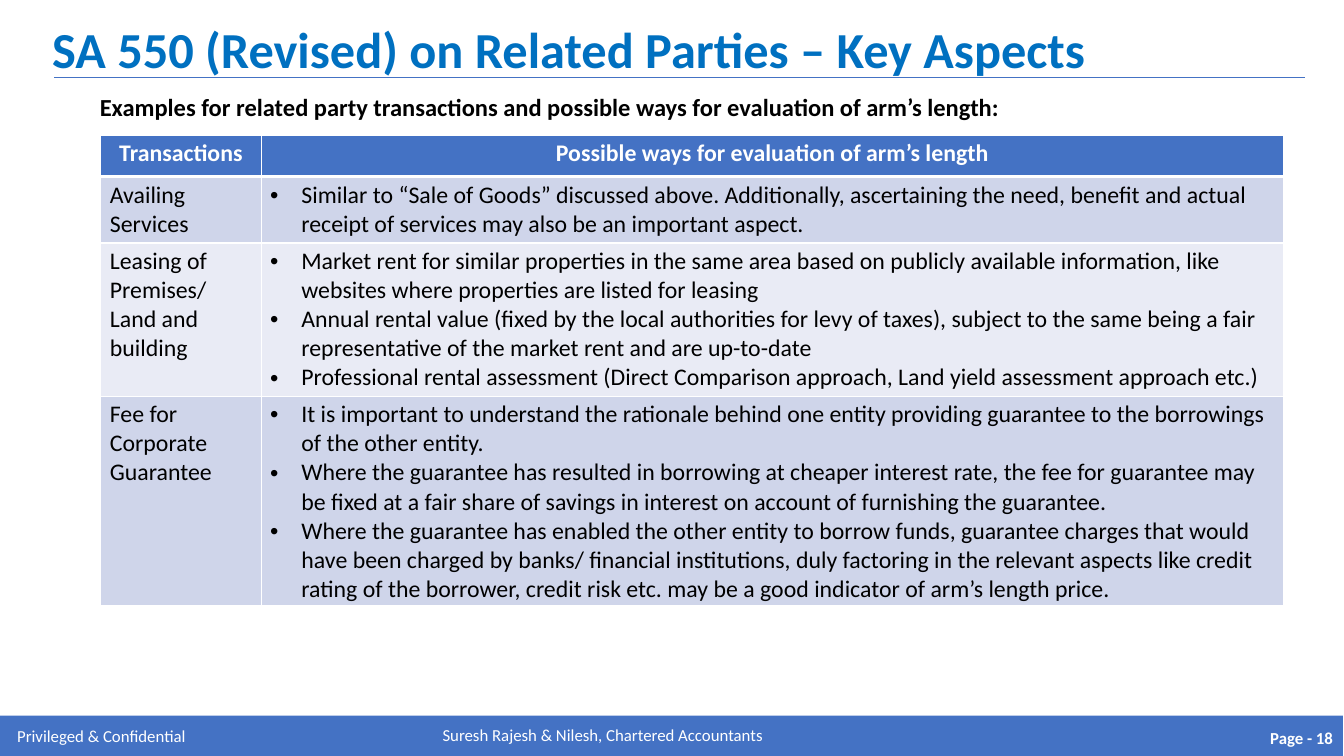
"""Build the slide on related party transactions under SA 550 (Revised)."""
from dataclasses import dataclass
from typing import Any

from lxml import etree
from pptx import Presentation
from pptx import util as u
from pptx.dml.color import RGBColor
from pptx.enum import shapes, text
from pptx.oxml import ns


@dataclass(frozen=True)
class Theme:
    font: str = "Calibri"
    accent: str = "4472C4"
    heading: str = "0070C0"
    ink: str = "000000"
    paper: str = "FFFFFF"
    bands: tuple[str, str] = ("CFD5EA", "E9EBF5")
    title_size: float = 36
    lead_size: float = 17.5
    table_size: float = 17
    footer_size: float = 12


@dataclass(frozen=True)
class Box:
    left: float
    top: float
    width: float
    height: float

    def emu(self) -> tuple[int, ...]:
        return tuple(u.Inches(v) for v in (self.left, self.top, self.width, self.height))


@dataclass(frozen=True)
class Transaction:
    name: str
    evaluations: tuple[str, ...]
    height: float


@dataclass(frozen=True)
class FooterNote:
    wording: str
    box: Box
    align: Any


THEME = Theme()
LEFT, CENTER, RIGHT = text.PP_ALIGN.LEFT, text.PP_ALIGN.CENTER, text.PP_ALIGN.RIGHT
HEADINGS = ("Transactions", "Possible ways for evaluation of arm’s length")
HEADING_HEIGHT = 0.41
COLUMN_WIDTHS = (1.59, 10.14)
TRANSACTIONS = (
    Transaction("Availing Services", (
        "Similar to “Sale of Goods” discussed above. Additionally, ascertaining the need, "
        "benefit and actual receipt of services may also be an important aspect.",
    ), 0.66),
    Transaction("Leasing of Premises/ Land and building", (
        "Market rent for similar properties in the same area based on publicly available "
        "information, like websites where properties are listed for leasing",
        "Annual rental value (fixed by the local authorities for levy of taxes), subject to "
        "the same being a fair representative of the market rent and are up-to-date",
        "Professional rental assessment (Direct Comparison approach, Land yield assessment "
        "approach etc.)",
    ), 1.52),
    Transaction("Fee for Corporate Guarantee", (
        "It is important to understand the rationale behind one entity providing guarantee "
        "to the borrowings of the other entity.",
        "Where the guarantee has resulted in borrowing at cheaper interest rate, the fee for "
        "guarantee may be fixed at a fair share of savings in interest on account of "
        "furnishing the guarantee.",
        "Where the guarantee has enabled the other entity to borrow funds, guarantee charges "
        "that would have been charged by banks/ financial institutions, duly factoring in the "
        "relevant aspects like credit rating of the borrower, credit risk etc. may be a good "
        "indicator of arm’s length price.",
    ), 2.08),
)
FOOTER_NOTES = (
    FooterNote("Privileged & Confidential", Box(0.08, 7.16, 2, 0.29), LEFT),
    FooterNote("Suresh Rajesh & Nilesh, Chartered Accountants", Box(3.93, 7.15, 4.1, 0.29), CENTER),
)


def write(frame: Any, *lines: str, size: float, color: str, bold: bool = False,
          align: Any = LEFT, spacing: Any = None, before: float = 0,
          indent: float = 0, bullet: str = "") -> None:
    for number, line in enumerate(lines):
        paragraph = frame.add_paragraph() if number else frame.paragraphs[0]
        paragraph.alignment = align
        paragraph.line_spacing = spacing
        paragraph.space_before = u.Pt(before)
        run = paragraph.add_run()
        run.text = line
        run.font.name, run.font.size, run.font.bold = THEME.font, u.Pt(size), bold
        run.font.color.rgb = RGBColor.from_string(color)
        properties = paragraph._p.get_or_add_pPr()
        properties.set("marL", str(u.Inches(indent)))
        properties.set("indent", str(u.Inches(-indent if bullet else 0)))
        if bullet:
            etree.SubElement(properties, ns.qn("a:buFont"), typeface="Arial")
            etree.SubElement(properties, ns.qn("a:buChar"), char=bullet)


def add_text(slide: Any, box: Box, wording: str, *, margins: tuple[float, float] = (0.1, 0.05),
             anchor: Any = text.MSO_ANCHOR.TOP, **style: Any) -> None:
    frame = slide.shapes.add_textbox(*box.emu()).text_frame
    frame.word_wrap = True
    frame.vertical_anchor = anchor
    frame.margin_left = frame.margin_right = u.Inches(margins[0])
    frame.margin_top = frame.margin_bottom = u.Inches(margins[1])
    write(frame, wording, **style)


def add_rule(slide: Any, left: float, right: float, top: float) -> None:
    rule = slide.shapes.add_connector(shapes.MSO_CONNECTOR.STRAIGHT, u.Inches(left),
                                      u.Inches(top), u.Inches(right), u.Inches(top))
    rule.line.color.rgb = RGBColor.from_string(THEME.accent)
    rule.line.width = u.Pt(0.5)
    etree.SubElement(rule._element.spPr, ns.qn("a:effectLst"))


def style_cell(cell: Any, fill: str, top: float, bottom: float) -> None:
    cell.margin_left = cell.margin_right = u.Inches(0.09)
    cell.margin_top = cell.margin_bottom = u.Inches(0.04)
    properties = cell._tc.get_or_add_tcPr()
    for side, width in (("L", 1), ("R", 1), ("T", top), ("B", bottom)):
        border = etree.SubElement(properties, ns.qn(f"a:ln{side}"), w=str(u.Pt(width)))
        solid = etree.SubElement(border, ns.qn("a:solidFill"))
        etree.SubElement(solid, ns.qn("a:srgbClr"), val=THEME.paper)
    cell.fill.solid()
    cell.fill.fore_color.rgb = RGBColor.from_string(fill)


def add_transactions(slide: Any, left: float, top: float) -> None:
    heights = (HEADING_HEIGHT, *(item.height for item in TRANSACTIONS))
    box = Box(left, top, sum(COLUMN_WIDTHS), sum(heights))
    table = slide.shapes.add_table(len(heights), len(COLUMN_WIDTHS), *box.emu()).table
    for column, width in zip(table.columns, COLUMN_WIDTHS):
        column.width = u.Inches(width)
    for row, height in zip(table.rows, heights):
        row.height = u.Inches(height)
    for column, heading in enumerate(HEADINGS):
        cell = table.cell(0, column)
        style_cell(cell, THEME.accent, 1, 3)
        write(cell.text_frame, heading, size=THEME.table_size, color=THEME.paper,
              bold=True, align=CENTER)
    for row, item in enumerate(TRANSACTIONS, 1):
        name, evaluations = table.cell(row, 0), table.cell(row, 1)
        for cell in (name, evaluations):
            style_cell(cell, THEME.bands[(row - 1) % 2], 3 if row == 1 else 1, 1)
        write(name.text_frame, item.name, size=THEME.table_size, color=THEME.ink)
        write(evaluations.text_frame, *item.evaluations, size=THEME.table_size,
              color=THEME.ink, indent=0.31, bullet="•")


def add_footer(slide: Any) -> None:
    band = slide.shapes.add_shape(shapes.MSO_SHAPE.RECTANGLE, *Box(0, 7.1, 13.32, 0.44).emu())
    band.shadow.inherit = False
    band.fill.solid()
    band.fill.fore_color.rgb = RGBColor.from_string(THEME.accent)
    band.line.fill.background()
    frame = band.text_frame
    frame.vertical_anchor = text.MSO_ANCHOR.MIDDLE
    frame.margin_top = frame.margin_bottom = 0
    write(frame, "Page - 18", size=THEME.footer_size, color=THEME.paper, bold=True, align=RIGHT)
    for note in FOOTER_NOTES:
        add_text(slide, note.box, note.wording, margins=(0.09, 0.04), size=THEME.footer_size,
                 color=THEME.paper, align=note.align, spacing=u.Pt(14.2))


def main() -> None:
    deck = Presentation()
    deck.slide_width, deck.slide_height = u.Inches(13.33), u.Inches(7.5)
    slide = deck.slides.add_slide(deck.slide_layouts[6])
    add_footer(slide)
    add_rule(slide, 0.54, 12.94, 0.77)
    add_text(slide, Box(0.42, 0.04, 12.9, 0.87), "SA 550 (Revised) on Related Parties – Key Aspects",
             anchor=text.MSO_ANCHOR.MIDDLE, size=THEME.title_size, color=THEME.heading, bold=True)
    add_text(slide, Box(0.52, 0.89, 12.4, 6.17),
             "Examples for related party transactions and possible ways for evaluation of arm’s length:",
             margins=(0.11, 0.06), size=THEME.lead_size, color=THEME.ink, bold=True,
             align=text.PP_ALIGN.JUSTIFY, spacing=0.9, before=10, indent=0.36)
    add_transactions(slide, 1, 1.34)
    deck.save("out.pptx")


if __name__ == "__main__":
    main()
